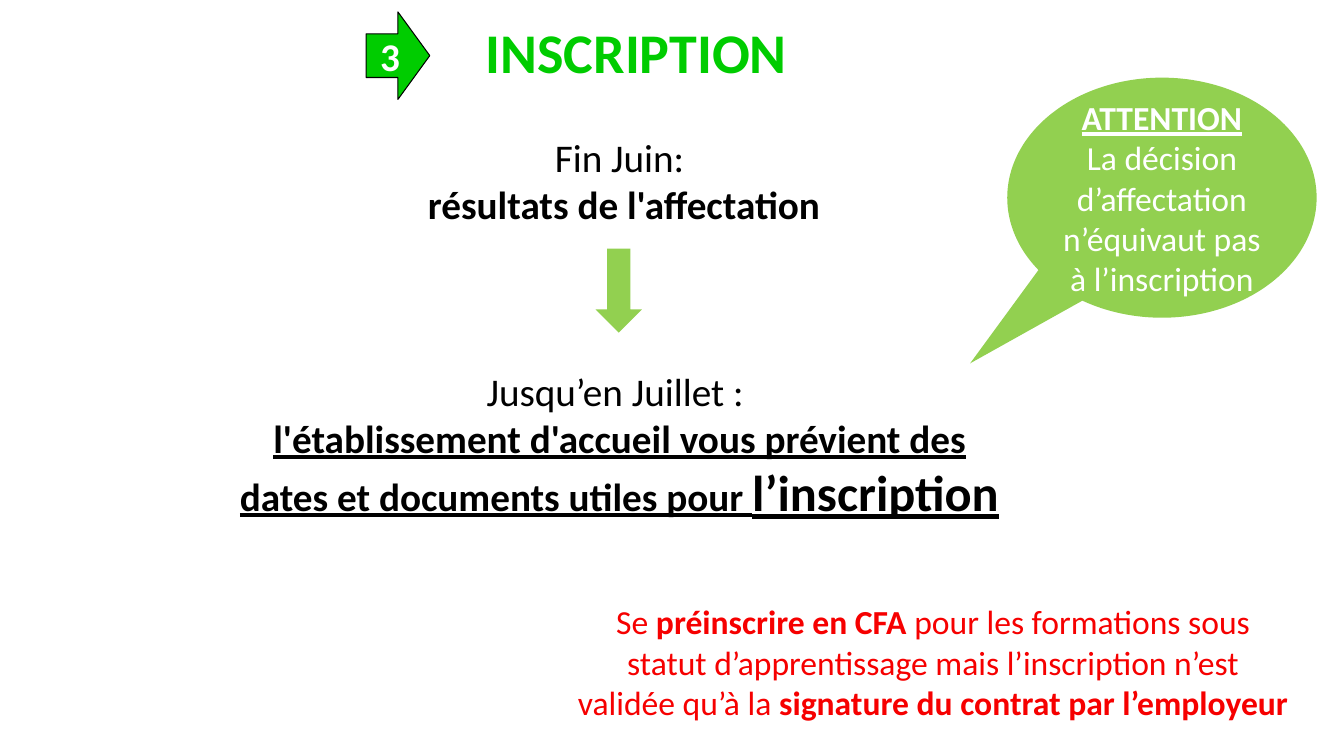
import pptx
import pptx.dml.color
import pptx.enum.shapes
import pptx.enum.text
import pptx.util

Pt = pptx.util.Pt
Shapes = pptx.enum.shapes.MSO_SHAPE
Anchor = pptx.enum.text.MSO_ANCHOR

GREEN, LIME, RED = "00CC00", "92D050", "F60000"
BLACK, WHITE = "000000", "FFFFFF"
BOLD = {"bold": True}
STRONG = {"bold": True, "underline": True}


def colour(hex_value):
    return pptx.dml.color.RGBColor.from_string(hex_value)


def write(box, paragraphs, size, text_colour, anchor=Anchor.TOP):
    """Fill a shape with centred paragraphs of (text, format) spans."""
    frame = box.text_frame
    frame.word_wrap = True
    frame.auto_size = pptx.enum.text.MSO_AUTO_SIZE.NONE
    frame.vertical_anchor = anchor
    for index, spans in enumerate(paragraphs):
        para = frame.add_paragraph() if index else frame.paragraphs[0]
        para.alignment = pptx.enum.text.PP_ALIGN.CENTER
        for text, changes in spans:
            span = para.add_run()
            span.text = text
            span.font.color.rgb = colour(text_colour)
            formats = {"name": "Calibri", "size": Pt(size), "bold": False, **changes}
            for name, value in formats.items():
                setattr(span.font, name, value)


def add_title(page, text, left, top, width, height):
    title = page.shapes.title
    places = {"left": left, "top": top, "width": width, "height": height}
    for name, value in places.items():
        setattr(title, name, Pt(value))
    write(title, [[(text, BOLD)]], 40, GREEN, Anchor.MIDDLE)


def add_text(page, place, paragraphs, size=28, text_colour=BLACK):
    box = page.shapes.add_textbox(*map(Pt, place))
    write(box, paragraphs, size, text_colour)


def add_filled_shape(page, kind, place, fill):
    shape = page.shapes.add_shape(kind, *map(Pt, place))
    shape.shadow.inherit = False
    shape.fill.solid()
    shape.fill.fore_color.rgb = colour(fill)
    shape.line.fill.background()
    return shape


def add_step_number(page, number, place):
    arrow = add_filled_shape(page, Shapes.RIGHT_ARROW, place, GREEN)
    arrow.line.color.rgb = colour(BLACK)
    arrow.line.width = Pt(0.75)
    write(arrow, [[(number, BOLD)]], 28, WHITE, Anchor.MIDDLE)


def add_callout(page, place, paragraphs):
    callout = add_filled_shape(page, Shapes.OVAL_CALLOUT, place, LIME)
    callout.adjustments[0] = -0.62
    callout.adjustments[1] = 0.69
    write(callout, paragraphs, 24, WHITE, Anchor.MIDDLE)


def main():
    deck = pptx.Presentation()
    deck.slide_width, deck.slide_height = Pt(960), Pt(540)
    page = deck.slides.add_slide(deck.slide_layouts[5])

    add_title(page, "INSCRIPTION", 94.5, 3.5, 720, 65.5)
    add_step_number(page, "3 ", (261.5, 8.5, 45.5, 62.5))
    add_text(page, (237, 91.5, 411, 75), [
        [("Fin Juin:", {})],
        [(" résultats de l'affectation", BOLD)],
    ])
    add_filled_shape(page, Shapes.DOWN_ARROW, (425.5, 177.5, 33, 60), LIME)
    add_text(page, (155.5, 258.5, 574, 119), [
        [("Jusqu’en Juillet : ", {})],
        [("l'établissement d'accueil vous prévient des dates et documents "
          "utiles pour ", STRONG),
         ("l’inscription", {**STRONG, "size": Pt(36)})],
    ])
    add_text(page, (404.5, 426, 524, 94.5), [[
        ("Se ", {}),
        ("préinscrire en CFA ", BOLD),
        ("pour les formations sous statut d’apprentissage mais "
         "l’inscription n’est validée qu’à la ", {}),
        ("signature du contrat par l’employeur ", BOLD),
    ]], 24, RED)
    add_callout(page, (719.5, 55.5, 221, 171.5), [
        [("ATTENTION", STRONG)],
        [("La décision d’affectation n’équivaut pas à l’inscription", {})],
    ])
    deck.save("out.pptx")


if __name__ == "__main__":
    main()
